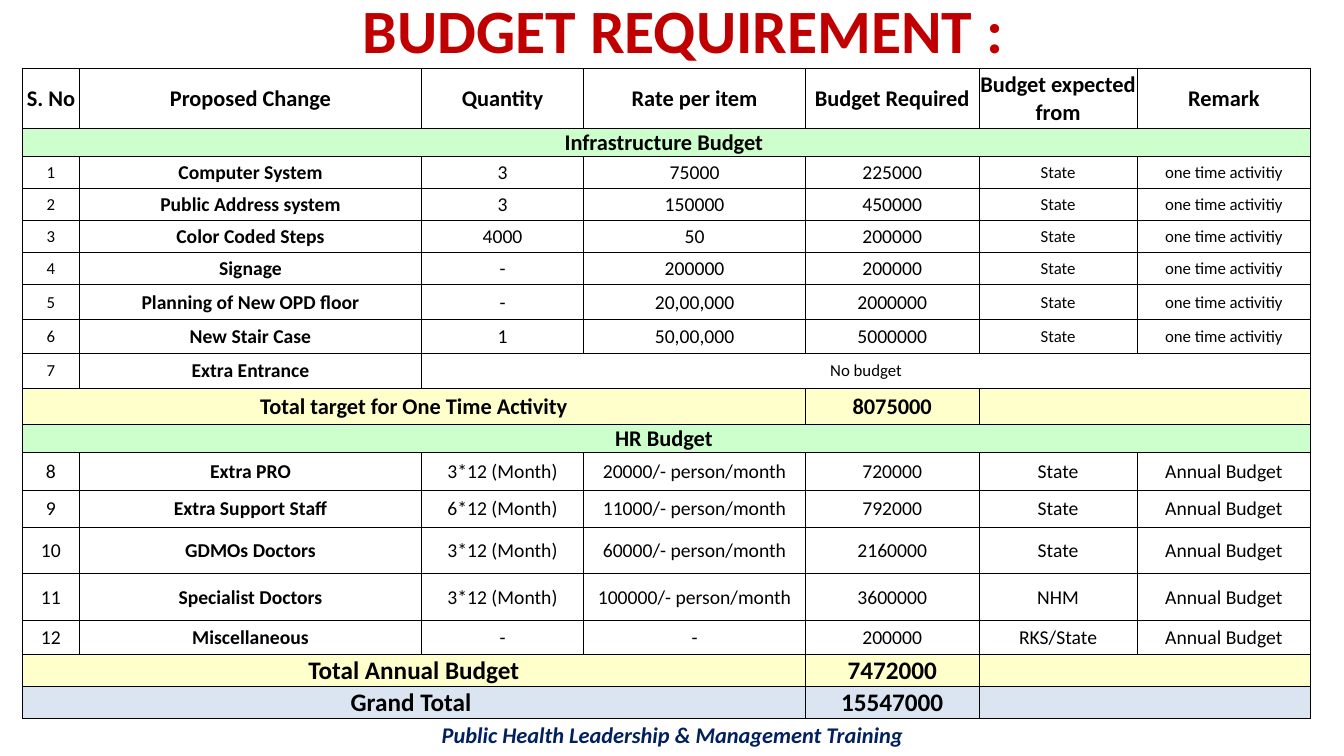
"""Build the budget requirement slide."""
from dataclasses import dataclass
from typing import Optional

from lxml import etree
from pptx import Presentation
from pptx.dml.color import RGBColor
from pptx.enum.text import MSO_ANCHOR, PP_ALIGN
from pptx.oxml.ns import qn
from pptx.util import Inches, Pt

MIDDLE = MSO_ANCHOR.MIDDLE
TOP = MSO_ANCHOR.TOP
CENTER = PP_ALIGN.CENTER

BLACK = RGBColor(0x00, 0x00, 0x00)
RED = RGBColor(0xC0, 0x00, 0x00)
NAVY = RGBColor(0x00, 0x20, 0x60)
GREEN = RGBColor(0xCC, 0xFF, 0xCC)
YELLOW = RGBColor(0xFF, 0xFF, 0xCC)
BLUE = RGBColor(0xDB, 0xE5, 0xF1)

FONT = "Calibri"
COLS = (0.57, 3.39, 1.61, 2.2, 1.72, 1.57, 1.72)
INSETS = {
    "margin_left": Inches(0.01),
    "margin_right": Inches(0.01),
    "margin_top": Inches(0.01),
    "margin_bottom": 0,
    "vertical_anchor": MIDDLE,
}


@dataclass(frozen=True)
class Kind:
    """Look of a table row: text sizes, bold columns, spans and fill."""
    sizes: tuple[int, ...]
    bold: tuple[int, ...]
    spans: tuple[int, ...] = (1,) * 7
    fill: Optional[RGBColor] = None


@dataclass(frozen=True)
class Row:
    """One table row, with its cell texts parted by bars."""
    kind: Kind
    height: float
    text: str


@dataclass(frozen=True)
class Label:
    """A line of text set in a box on the slide."""
    text: str
    box: tuple[float, float, float, float]
    size: int
    color: RGBColor
    anchor: MSO_ANCHOR
    italic: bool = False
    spacing: float = 1.0


HEAD = Kind((16,) * 7, tuple(range(7)))
BAND = Kind((16,), (0,), (7,), GREEN)
ONCE = Kind((12, 14, 14, 14, 14, 12, 12), (1,))
FREE = Kind((12, 14, 12), (1,), (1, 1, 5))
YEAR = Kind((14,) * 7, (1,))
PART = Kind((16,) * 3, (0, 1), (4, 1, 2), YELLOW)
SUM = Kind((18,) * 3, (0, 1), (4, 1, 2), YELLOW)
GRAND = Kind((18,) * 3, (0, 1), (4, 1, 2), BLUE)

ROWS = (
    Row(HEAD, 0.59, "S. No|Proposed Change|Quantity|Rate per item|"
        "Budget Required|Budget expected from|Remark"),
    Row(BAND, 0.28, "Infrastructure Budget "),
    Row(ONCE, 0.32, "1|Computer System|3|75000|225000|State|one time activitiy"),
    Row(ONCE, 0.31, "2|Public Address system|3|150000|450000|State|one time activitiy"),
    Row(ONCE, 0.32, "3|Color Coded Steps|4000|50|200000|State|one time activitiy"),
    Row(ONCE, 0.32, "4|Signage|-|200000|200000|State|one time activitiy"),
    Row(ONCE, 0.35, "5|Planning of New OPD floor|-|20,00,000|2000000|State|one time activitiy"),
    Row(ONCE, 0.33, "6|New Stair Case|1|50,00,000|5000000|State|one time activitiy"),
    Row(FREE, 0.35, "7|Extra Entrance|No budget"),
    Row(PART, 0.36, "Total target for One Time Activity|8075000|"),
    Row(BAND, 0.27, "HR Budget "),
    Row(YEAR, 0.37, "8|Extra PRO|3*12 (Month)|20000/- person/month|720000|State|Annual Budget"),
    Row(YEAR, 0.37, "9|Extra Support Staff|6*12 (Month)|11000/- person/month|"
        "792000|State|Annual Budget"),
    Row(YEAR, 0.46, "10|GDMOs Doctors|3*12 (Month)|60000/- person/month|"
        "2160000|State|Annual Budget"),
    Row(YEAR, 0.46, "11|Specialist Doctors|3*12 (Month)|100000/- person/month|"
        "3600000|NHM|Annual Budget"),
    Row(YEAR, 0.34, "12|Miscellaneous|-|-|200000|RKS/State|Annual Budget"),
    Row(SUM, 0.29, "Total Annual Budget|7472000|"),
    Row(GRAND, 0.29, "Grand Total |15547000|"),
)

LABELS = (
    Label("BUDGET REQUIREMENT :", (0.56, 0, 12.44, 0.67), 44, RED, MIDDLE, spacing=0.9),
    Label("Public Health Leadership & Management Training",
          (0.92, 7.11, 11.5, 0.37), 16, NAVY, TOP, italic=True),
)


def apply(target, values: dict) -> None:
    """Set each named attribute on the target."""
    for name, value in values.items():
        setattr(target, name, value)


def write(para, text: str, color: RGBColor, values: dict) -> None:
    """Put one centred run in a paragraph."""
    para.alignment = CENTER
    if text:
        run = para.add_run()
        run.text = text
        apply(run.font, {"name": FONT, **values})
        run.font.color.rgb = color


def edge(cell) -> None:
    """Give a cell thin black borders."""
    props = cell._tc.get_or_add_tcPr()
    for side in ("lnL", "lnR", "lnT", "lnB"):
        line = etree.SubElement(props, qn(f"a:{side}"), w=str(Pt(0.5)))
        fill = etree.SubElement(line, qn("a:solidFill"))
        etree.SubElement(fill, qn("a:srgbClr"), val=str(BLACK))


def fill_row(table, index: int, row: Row) -> None:
    """Style, merge and fill one table row."""
    kind = row.kind
    table.rows[index].height = Inches(row.height)
    for cell in table.rows[index].cells:
        apply(cell, INSETS)
        edge(cell)
        if kind.fill is None:
            cell.fill.background()
        else:
            cell.fill.solid()
            cell.fill.fore_color.rgb = kind.fill
    col = 0
    for part, (text, span, size) in enumerate(zip(row.text.split("|"), kind.spans, kind.sizes)):
        cell = table.cell(index, col)
        if span > 1:
            cell.merge(table.cell(index, col + span - 1))
        write(cell.text_frame.paragraphs[0], text, BLACK,
              {"size": Pt(size), "bold": part in kind.bold})
        col += span


def draw_table(slide) -> None:
    """Add the budget table."""
    high = sum(row.height for row in ROWS)
    frame = slide.shapes.add_table(len(ROWS), len(COLS), Inches(0.22), Inches(0.68),
                                   Inches(sum(COLS)), Inches(high))
    table = frame.table
    apply(table, {"first_row": False, "horz_banding": False})
    for col, width in zip(table.columns, COLS):
        col.width = Inches(width)
    for index, row in enumerate(ROWS):
        fill_row(table, index, row)


def draw_label(slide, label: Label) -> None:
    """Add a text box."""
    box = slide.shapes.add_textbox(*(Inches(n) for n in label.box))
    frame = box.text_frame
    apply(frame, {"word_wrap": True, "vertical_anchor": label.anchor})
    para = frame.paragraphs[0]
    para.line_spacing = label.spacing
    write(para, label.text, label.color,
          {"size": Pt(label.size), "bold": True, "italic": label.italic})


def main() -> None:
    """Build and save the deck."""
    deck = Presentation()
    apply(deck, {"slide_width": Inches(13.33), "slide_height": Inches(7.5)})
    slide = deck.slides.add_slide(deck.slide_layouts[6])
    draw_table(slide)
    for label in LABELS:
        draw_label(slide, label)
    deck.save("out.pptx")


if __name__ == "__main__":
    main()
